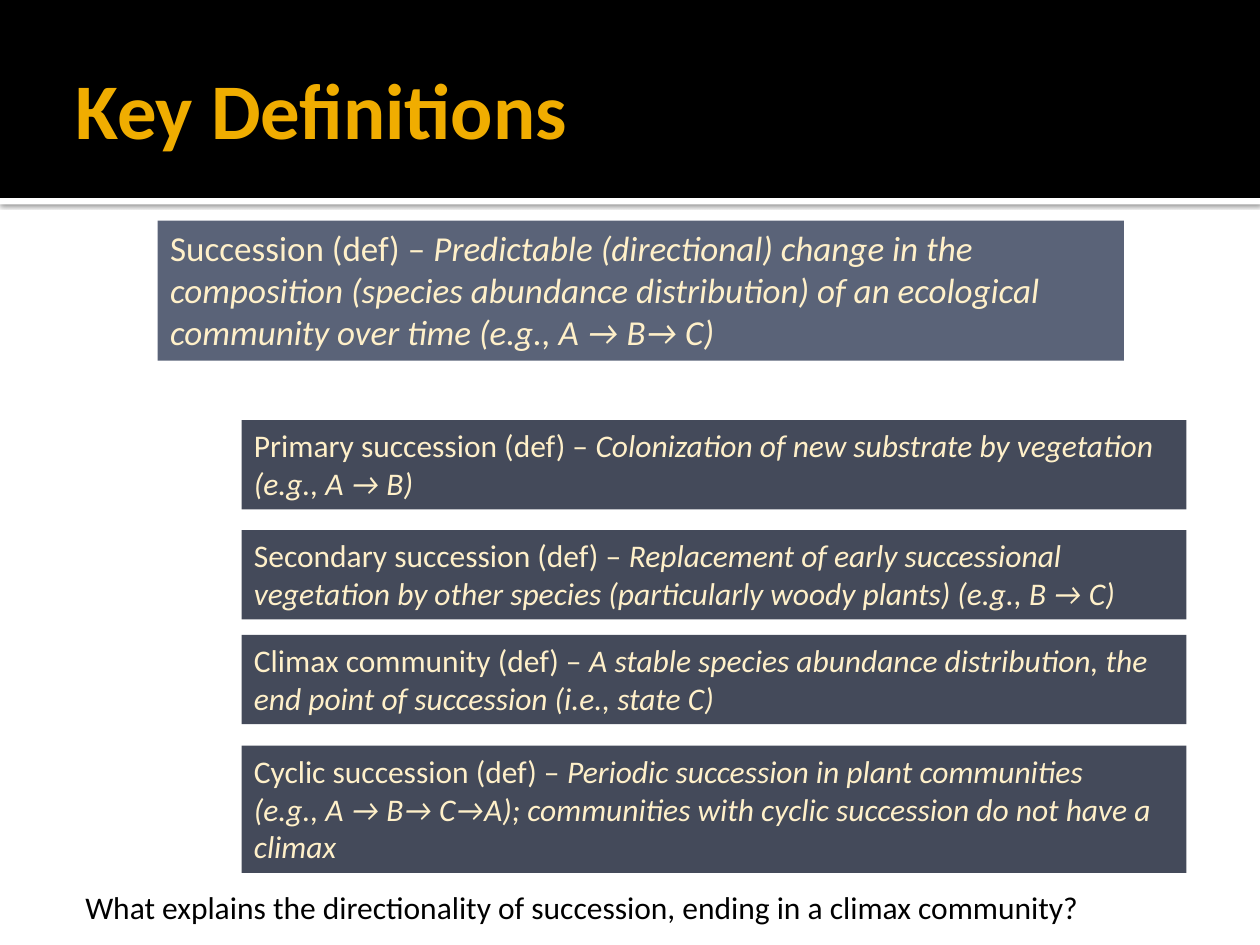
"""Build the Key Definitions slide on ecological succession."""
from lxml import etree
from pptx import Presentation
from pptx.dml.color import RGBColor
from pptx.enum.shapes import MSO_SHAPE
from pptx.enum.text import MSO_ANCHOR, PP_ALIGN
from pptx.oxml.ns import qn
from pptx.util import Cm, Pt

RECT = MSO_SHAPE.RECTANGLE
MIDDLE, TOP = MSO_ANCHOR.MIDDLE, MSO_ANCHOR.TOP
LEFT = PP_ALIGN.LEFT
BLACK = RGBColor(0x00, 0x00, 0x00)
WHITE = RGBColor(0xFF, 0xFF, 0xFF)
GOLD = RGBColor(0xF0, 0xAD, 0x00)
CREAM = RGBColor(0xFF, 0xF0, 0xC9)
SLATE = RGBColor(0x5A, 0x63, 0x78)
DARK = RGBColor(0x44, 0x4A, 0x5A)
FONT = "Calibri"

TITLE = "Key Definitions"
MAIN = ("Succession", ["Predictable (directional) change in the composition (species "
                       "abundance distribution) of an ecological community over time "
                       "(e.g., A → B→ C)"])
TERMS = [
    (8.47, 1.8, "Primary succession",
     ["Colonization of new substrate by vegetation (e.g., A → B)"]),
    (10.69, 1.8, "Secondary succession",
     ["Replacement of early successional vegetation by other species "
      "(particularly woody plants) (e.g., B → C)"]),
    (12.8, 1.8, "Climax community",
     ["A stable species abundance distribution, the end point of succession "
      "(i.e., state C)"]),
    (15.03, 2.57, "Cyclic succession",
     ["Periodic succession in plant communities",
      "(e.g., A → B→ C→A); communities with cyclic succession do not have a climax"]),
]
QUESTION = "What explains the directionality of succession, ending in a climax community?"
BAND = 3.99


def add_rect(slide, box, fill):
    rect = slide.shapes.add_shape(RECT, *map(Cm, box))
    rect.shadow.inherit = False
    rect.fill.solid()
    rect.fill.fore_color.rgb = fill
    rect.line.fill.background()
    return rect


def add_run(para, text, size, color, bold=False, slant=False):
    run = para.add_run()
    run.text = text
    font = run.font
    font.name, font.size, font.bold, font.italic = FONT, Pt(size), bold, slant
    font.color.rgb = color


def add_term(slide, box, fill, size, term, lines):
    frame = add_rect(slide, box, fill).text_frame
    frame.word_wrap = True
    frame.vertical_anchor = TOP
    for i, line in enumerate(lines):
        para = frame.add_paragraph() if i else frame.paragraphs[0]
        para.alignment = LEFT
        if i == 0:
            add_run(para, f"{term} (def) – ", size, CREAM)
        add_run(para, line, size, CREAM, slant=True)


def add_label(slide, box, text, size, color, bold=False):
    frame = slide.shapes.add_textbox(*map(Cm, box)).text_frame
    add_run(frame.paragraphs[0], text, size, color, bold)
    return frame


def add_shade(shape):
    effects = shape.element.spPr.find(qn("a:effectLst"))
    outer = etree.SubElement(effects, qn("a:outerShdw"), blurRad=str(Pt(2.5)),
                             dist=str(Pt(0.8)), dir="5400000", rotWithShape="0")
    tint = etree.SubElement(outer, qn("a:srgbClr"), val=str(BLACK))
    etree.SubElement(tint, qn("a:alpha"), val="60000")


def main():
    deck = Presentation()
    deck.slide_width, deck.slide_height = Cm(25.4), Cm(19.05)
    slide = deck.slides.add_slide(deck.slide_layouts[6])
    add_shade(add_rect(slide, (0, BAND, 25.4, 0.13), WHITE))
    add_rect(slide, (0, 0, 25.4, BAND), BLACK)
    title = add_label(slide, (1.27, 0.43, 22.86, 3.48), TITLE, 45, GOLD, True)
    title.word_wrap = True
    title.vertical_anchor = MIDDLE
    add_term(slide, (3.18, 4.45, 19.48, 2.82), SLATE, 20, *MAIN)
    for top, height, term, lines in TERMS:
        add_term(slide, (4.87, top, 19.05, height), DARK, 18, term, lines)
    add_label(slide, (1.47, 17.78, 20.78, 1.02), QUESTION, 18, BLACK).word_wrap = False
    deck.save("out.pptx")


if __name__ == "__main__":
    main()
